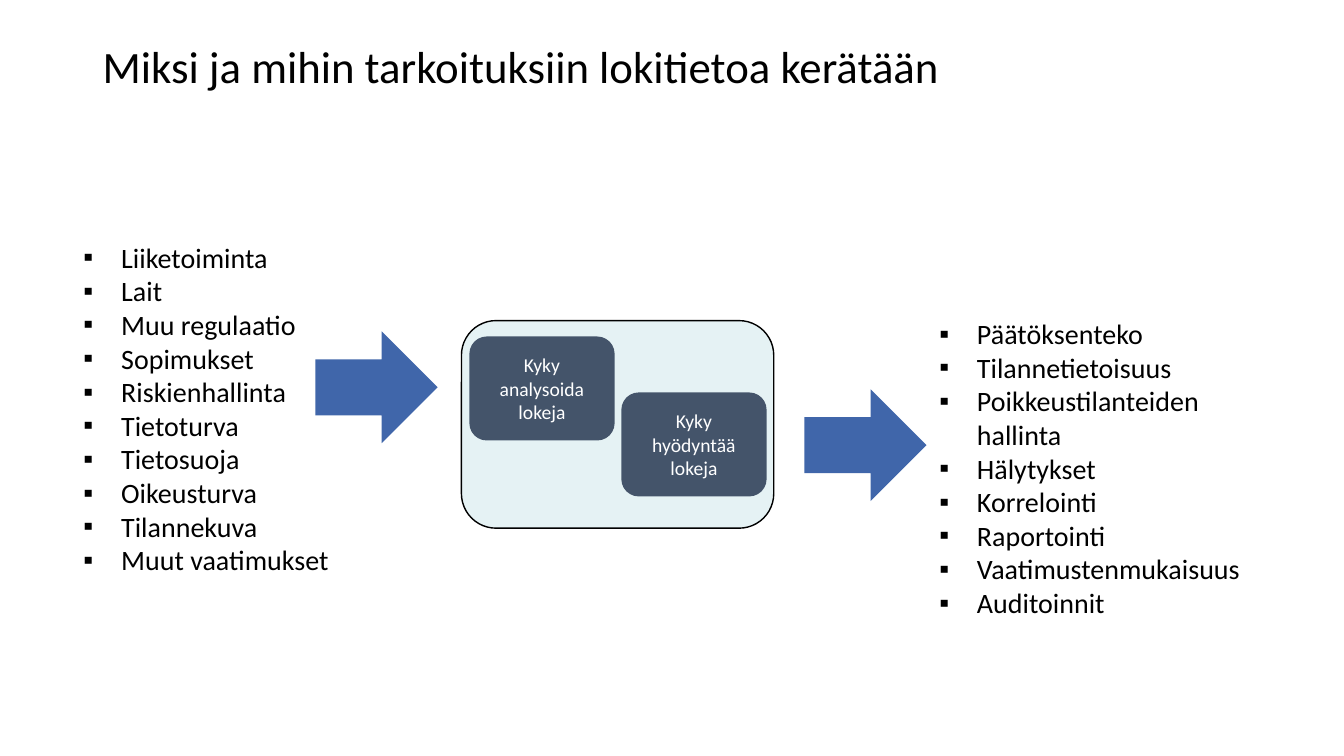
"""Build the slide on why log data is collected and what it is used for."""
from lxml import etree
from pptx import Presentation
from pptx.dml.color import RGBColor
from pptx.enum import shapes, text
from pptx.oxml import ns
from pptx.util import Cm, Pt

BLACK = RGBColor(0x00, 0x00, 0x00)
WHITE = RGBColor(0xFF, 0xFF, 0xFF)
PALE = RGBColor(0xE5, 0xF2, 0xF4)
SLATE = RGBColor(0x44, 0x54, 0x6A)
BLUE = RGBColor(0x40, 0x66, 0xAA)


def write(shape, words, size=20, color=BLACK, align=text.PP_ALIGN.LEFT,
          anchor=text.MSO_ANCHOR.TOP, space=1.0, inset=None, bullet=None):
    frame = shape.text_frame
    frame.text = words
    frame.word_wrap = True
    frame.auto_size = text.MSO_AUTO_SIZE.NONE
    frame.vertical_anchor = anchor
    if inset is not None:
        frame.margin_left = frame.margin_right = Cm(inset)
        frame.margin_top = frame.margin_bottom = Cm(inset)
    for para in frame.paragraphs:
        para.alignment = align
        para.line_spacing = space
        para.space_before = para.space_after = Pt(0)
        if bullet:
            props = para._p.get_or_add_pPr()
            props.set("marL", str(Cm(0.95)))
            props.set("indent", str(Cm(-0.95)))
            etree.SubElement(props, ns.qn("a:buFont")).set("typeface", "Arial")
            etree.SubElement(props, ns.qn("a:buChar")).set("char", bullet)
        for run in para.runs:
            run.font.name = "Calibri"
            run.font.size = Pt(size)
            run.font.color.rgb = color


def place(shape, left, top, width, height):
    shape.left, shape.top = Cm(left), Cm(top)
    shape.width, shape.height = Cm(width), Cm(height)


deck = Presentation()
deck.slide_width, deck.slide_height = Cm(33.87), Cm(19.05)
slide = deck.slides.add_slide(deck.slide_layouts[3])
title, causes, uses = slide.placeholders

place(title, 2.33, 1.01, 29.21, 3.68)
write(title, "Miksi ja mihin tarkoituksiin lokitietoa kerätään", size=32, space=0.9)

place(causes, 1.85, 5.36, 7.39, 9.86)
write(causes, "\n".join([
    "Liiketoiminta", "Lait", "Muu regulaatio", "Sopimukset", "Riskienhallinta",
    "Tietoturva", "Tietosuoja", "Oikeusturva", "Tilannekuva", "Muut vaatimukset",
]), anchor=text.MSO_ANCHOR.MIDDLE, bullet="▪")

place(uses, 23.67, 7.98, 7.77, 7.7)
write(uses, "\n".join([
    "Päätöksenteko", "Tilannetietoisuus", "Poikkeustilanteiden hallinta", "Hälytykset",
    "Korrelointi", "Raportointi", "Vaatimustenmukaisuus", "Auditoinnit",
]), inset=0, bullet="▪")

ROUND = shapes.MSO_SHAPE.ROUNDED_RECTANGLE
ARROW = shapes.MSO_SHAPE.RIGHT_ARROW
for kind, left, top, width, height, fill, label in [
    (ROUND, 11.63, 8.08, 7.87, 5.23, PALE, ""),
    (ROUND, 11.83, 8.48, 3.66, 2.62, SLATE, "Kyky analysoida lokeja"),
    (ROUND, 15.66, 9.89, 3.66, 2.62, SLATE, "Kyky hyödyntää lokeja"),
    (ARROW, 7.95, 8.35, 3.08, 2.82, BLUE, ""),
    (ARROW, 20.27, 9.81, 3.08, 2.82, BLUE, ""),
]:
    shape = slide.shapes.add_shape(kind, Cm(left), Cm(top), Cm(width), Cm(height))
    shape.shadow.inherit = False
    shape.fill.solid()
    shape.fill.fore_color.rgb = fill
    if fill == PALE:
        shape.line.color.rgb = BLACK
        shape.line.width = Pt(1)
    else:
        shape.line.fill.background()
    if label:
        write(shape, label, size=14, color=WHITE, align=text.PP_ALIGN.CENTER,
              anchor=text.MSO_ANCHOR.MIDDLE)

deck.save("out.pptx")
